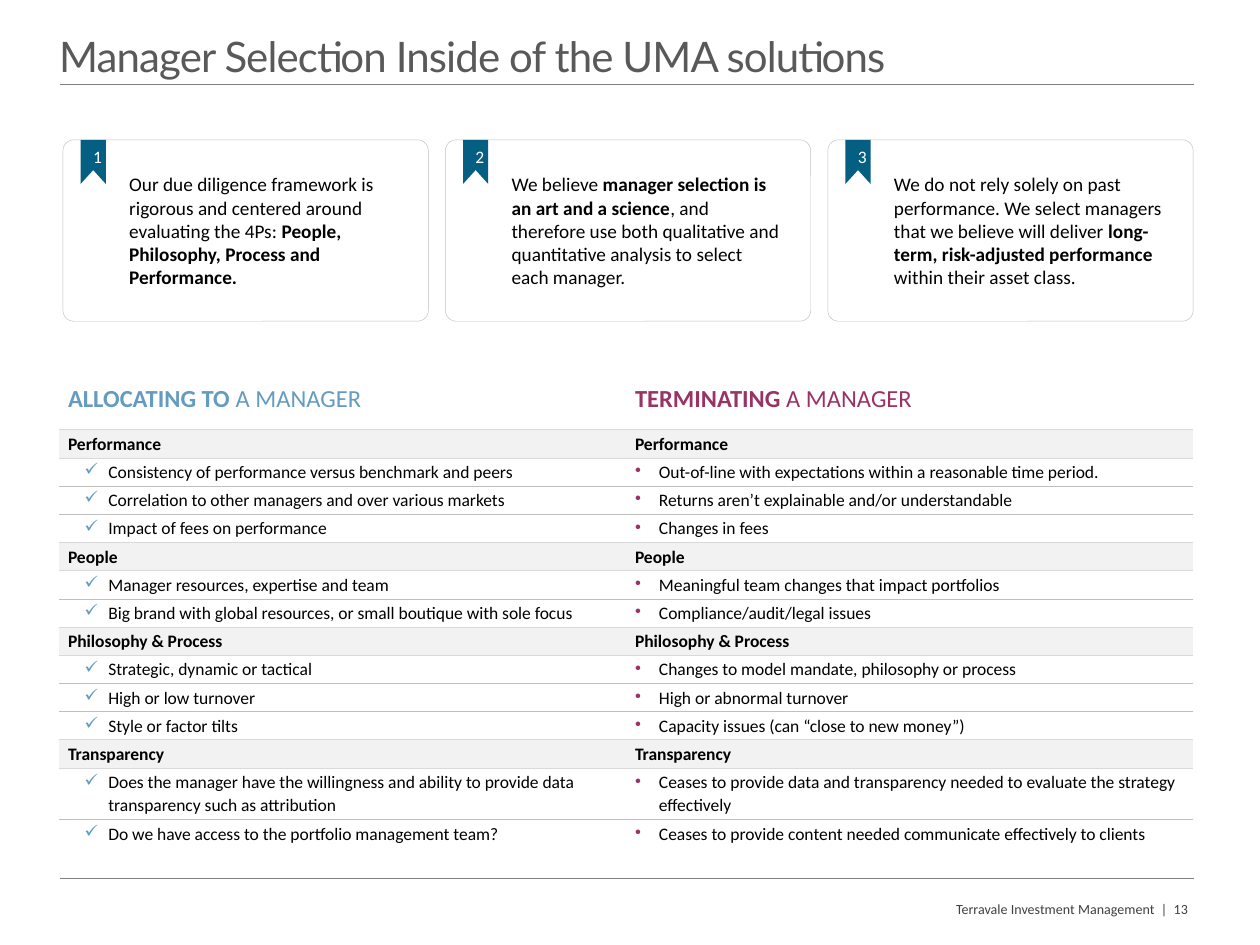
from lxml.etree import SubElement
from pptx import Presentation
from pptx.dml.color import RGBColor
from pptx.enum.shapes import MSO_CONNECTOR as Connector, MSO_SHAPE as Shape
from pptx.enum.text import MSO_ANCHOR as Anchor, MSO_AUTO_SIZE as AutoSize, PP_ALIGN as Align
from pptx.oxml import parse_xml
from pptx.oxml.ns import nsdecls, qn
from pptx.util import Inches, Pt

BLACK = RGBColor(0x00, 0x00, 0x00)
WHITE = RGBColor(0xFF, 0xFF, 0xFF)
TITLE_GRAY = RGBColor(0x59, 0x59, 0x59)
FOOTER_GRAY = RGBColor(0x40, 0x40, 0x40)
RULE_GRAY = RGBColor(0x80, 0x80, 0x80)
ITEM_EDGE = RGBColor(0xBF, 0xBF, 0xBF)
GROUP_EDGE = RGBColor(0xD9, 0xD9, 0xD9)
GROUP_FILL = RGBColor(0xF2, 0xF2, 0xF2)
TEAL = RGBColor(0x04, 0x5F, 0x83)
BLUE = RGBColor(0x64, 0x9B, 0xC0)
PLUM = RGBColor(0x99, 0x33, 0x66)

HAIRLINE = Pt(0.25)
NO_STYLE = "{2D5ABB26-0587-4C30-8999-92F81FD0307C}"

BELIEFS = [
    [("Our due diligence framework is rigorous and centered around evaluating the 4Ps: ", False),
     ("People, Philosophy, Process and Performance.", True)],
    [("We believe ", False),
     ("manager selection is an art and a science", True),
     (", and therefore use both qualitative and quantitative analysis to select each manager.", False)],
    [("We do not rely solely on past performance. We select managers that we believe will deliver ", False),
     ("long-term, risk-adjusted performance ", True),
     ("within their asset class.", False)],
]

DECISIONS = [("ALLOCATING TO", BLUE, "✓", 0.2), ("TERMINATING", PLUM, "•", 0.07)]

CRITERIA = [
    ("Performance", [
        ("Consistency of performance versus benchmark and peers",
         "Out-of-line with expectations within a reasonable time period."),
        ("Correlation to other managers and over various markets",
         "Returns aren’t explainable and/or understandable"),
        ("Impact of fees on performance", "Changes in fees"),
    ]),
    ("People", [
        ("Manager resources, expertise and team",
         "Meaningful team changes that impact portfolios"),
        ("Big brand with global resources, or small boutique with sole focus",
         "Compliance/audit/legal issues"),
    ]),
    ("Philosophy & Process", [
        ("Strategic, dynamic or tactical", "Changes to model mandate, philosophy or process"),
        ("High or low turnover", "High or abnormal turnover"),
        ("Style or factor tilts", "Capacity issues (can “close to new money”)"),
    ]),
    ("Transparency", [
        ("Does the manager have the willingness and ability to provide data "
         "transparency such as attribution",
         "Ceases to provide data and transparency needed to evaluate the strategy effectively"),
        ("Do we have access to the portfolio management team?",
         "Ceases to provide content needed communicate effectively to clients"),
    ]),
]


def add_run(paragraph, text, size, color, bold=False, face="Calibri"):
    run = paragraph.add_run()
    run.text = text
    run.font.size = Pt(size)
    run.font.name = face
    run.font.bold = bold
    run.font.color.rgb = color
    return run


def set_margins(holder, left, top, right, bottom):
    holder.margin_left, holder.margin_top = Inches(left), Inches(top)
    holder.margin_right, holder.margin_bottom = Inches(right), Inches(bottom)


def add_rule(slide, left, top, width):
    rule = slide.shapes.add_connector(
        Connector.STRAIGHT, Inches(left), Inches(top), Inches(left + width), Inches(top))
    rule.line.color.rgb = RULE_GRAY
    rule.line.width = HAIRLINE
    SubElement(rule._element.spPr, qn("a:effectLst"))


def place_title(slide, left, top, width, height):
    title = slide.shapes.title
    title.left, title.top = Inches(left), Inches(top)
    title.width, title.height = Inches(width), Inches(height)
    frame = title.text_frame
    set_margins(frame, 0, 0, 0, 0)
    frame.auto_size = AutoSize.NONE
    frame.vertical_anchor = Anchor.TOP
    heading = frame.paragraphs[0]
    heading.alignment = Align.LEFT
    heading.line_spacing = 0.86
    run = add_run(heading, "Manager Selection Inside of the UMA solutions", 24, TITLE_GRAY, face="Lato")
    run.font._element.set("spc", "-50")


def add_ribbon(slide, left, top, width, height, number):
    right, bottom = left + width, top + height
    corners = [(right, top), (right, bottom), (left + width / 2, bottom - 0.11), (left, bottom)]
    outline = slide.shapes.build_freeform(Inches(left), Inches(top))
    outline.add_line_segments([(Inches(x), Inches(y)) for x, y in corners], close=True)
    ribbon = outline.convert_to_shape()
    ribbon.shadow.inherit = False
    ribbon.fill.solid()
    ribbon.fill.fore_color.rgb = TEAL
    ribbon.line.fill.background()
    frame = ribbon.text_frame
    frame.word_wrap = True
    frame.vertical_anchor = Anchor.TOP
    frame.paragraphs[0].alignment = Align.CENTER
    add_run(frame.paragraphs[0], str(number), 10, WHITE)


def add_card(slide, left, top, width, height, number, belief):
    card = slide.shapes.add_shape(
        Shape.ROUNDED_RECTANGLE, Inches(left), Inches(top), Inches(width), Inches(height))
    card.adjustments[0] = 0.06
    card.shadow.inherit = False
    card.fill.solid()
    card.fill.fore_color.rgb = WHITE
    card.line.color.rgb = ITEM_EDGE
    card.line.width = HAIRLINE
    frame = card.text_frame
    frame.word_wrap = True
    frame.vertical_anchor = Anchor.MIDDLE
    set_margins(frame, 0.5, 0.05, 0.2, 0.05)
    frame.paragraphs[0].alignment = Align.LEFT
    for text, bold in belief:
        add_run(frame.paragraphs[0], text, 11, BLACK, bold)
    add_ribbon(slide, left + 0.14, top, 0.2, 0.35, number)


def add_cards(slide, left, top, width, height):
    card_width = 2.9
    step = (width - card_width) / (len(BELIEFS) - 1)
    for index, belief in enumerate(BELIEFS):
        add_card(slide, left + index * step, top, card_width, height, index + 1, belief)


def set_edges(cell, above, below):
    edges = [(tag, color) for tag, color in (("lnT", above), ("lnB", below)) if color is not None]
    for position, (tag, color) in enumerate(edges):
        cell._tc.get_or_add_tcPr().insert(position, parse_xml(
            f'<a:{tag} {nsdecls("a")} w="{HAIRLINE}"><a:solidFill>'
            f'<a:srgbClr val="{color}"/></a:solidFill></a:{tag}>'))


def add_bullet(paragraph, mark, color):
    properties = paragraph._p.get_or_add_pPr()
    indent = Inches(0.19)
    properties.set("marL", str(indent))
    properties.set("indent", str(-indent))
    SubElement(SubElement(properties, qn("a:buClr")), qn("a:srgbClr")).set("val", str(color))
    SubElement(properties, qn("a:buChar")).set("char", mark)


def fill_cell(cell, kind, text, decision):
    label, color, mark, item_margin = decision
    cell.vertical_anchor = Anchor.MIDDLE
    paragraph = cell.text_frame.paragraphs[0]
    if kind == "heading":
        set_margins(cell, 0.07, 0, 0.07, 0)
        add_run(paragraph, label, 14, color, True)
        add_run(paragraph, text, 14, color)
    else:
        set_margins(cell, item_margin if kind == "item" else 0.07, 0.02, 0.07, 0.02)
        if kind == "item":
            add_bullet(paragraph, mark, color)
        paragraph.line_spacing = 1.07
        add_run(paragraph, text, 10, BLACK, kind == "group")
    if kind == "group":
        cell.fill.solid()
        cell.fill.fore_color.rgb = GROUP_FILL
    else:
        cell.fill.background()


def add_criteria_table(slide, left, top, width, height):
    lines = [("heading", (" A MANAGER",) * 2)]
    for group, items in CRITERIA:
        lines.append(("group", (group,) * 2))
        lines.extend(("item", pair) for pair in items)
    kinds = [kind for kind, _ in lines]
    edges = [ITEM_EDGE if pair == ("item", "item") else GROUP_EDGE for pair in zip(kinds, kinds[1:])]
    edges = [None, *edges, None]

    table = slide.shapes.add_table(
        len(lines), 2, Inches(left), Inches(top), Inches(width), Inches(height)).table
    table.first_row = table.horz_banding = False
    table._tbl.tblPr.find(qn("a:tableStyleId")).text = NO_STYLE
    special_heights = {0: 0.49, len(lines) - 2: 0.41}
    plain_height = (height - sum(special_heights.values())) / (len(lines) - 2)
    for row, (kind, texts) in enumerate(lines):
        table.rows[row].height = Inches(special_heights.get(row, plain_height))
        for column, text in enumerate(texts):
            cell = table.cell(row, column)
            fill_cell(cell, kind, text, DECISIONS[column])
            set_edges(cell, edges[row], edges[row + 1])


def add_footer(slide, left, top, width, height):
    footer = slide.shapes.add_textbox(Inches(left), Inches(top), Inches(width), Inches(height))
    frame = footer.text_frame
    frame.word_wrap = True
    frame.paragraphs[0].alignment = Align.RIGHT
    add_run(frame.paragraphs[0], "Terravale Investment Management  |  13", 8, FOOTER_GRAY)


def main():
    deck = Presentation()
    deck.slide_width, deck.slide_height = Inches(10), Inches(7.5)
    slide = deck.slides.add_slide(deck.slide_layouts[5])
    for rule_top in (6.97, 0.67):
        add_rule(slide, 0.48, rule_top, 9)
    place_title(slide, 0.47, 0.3, 9, 0.35)
    add_criteria_table(slide, 0.47, 2.92, 9, 3.81)
    add_cards(slide, 0.5, 1.11, 8.97, 1.44)
    add_footer(slide, 6.91, 7.1, 2.62, 0.24)
    deck.save("out.pptx")


if __name__ == "__main__":
    main()
